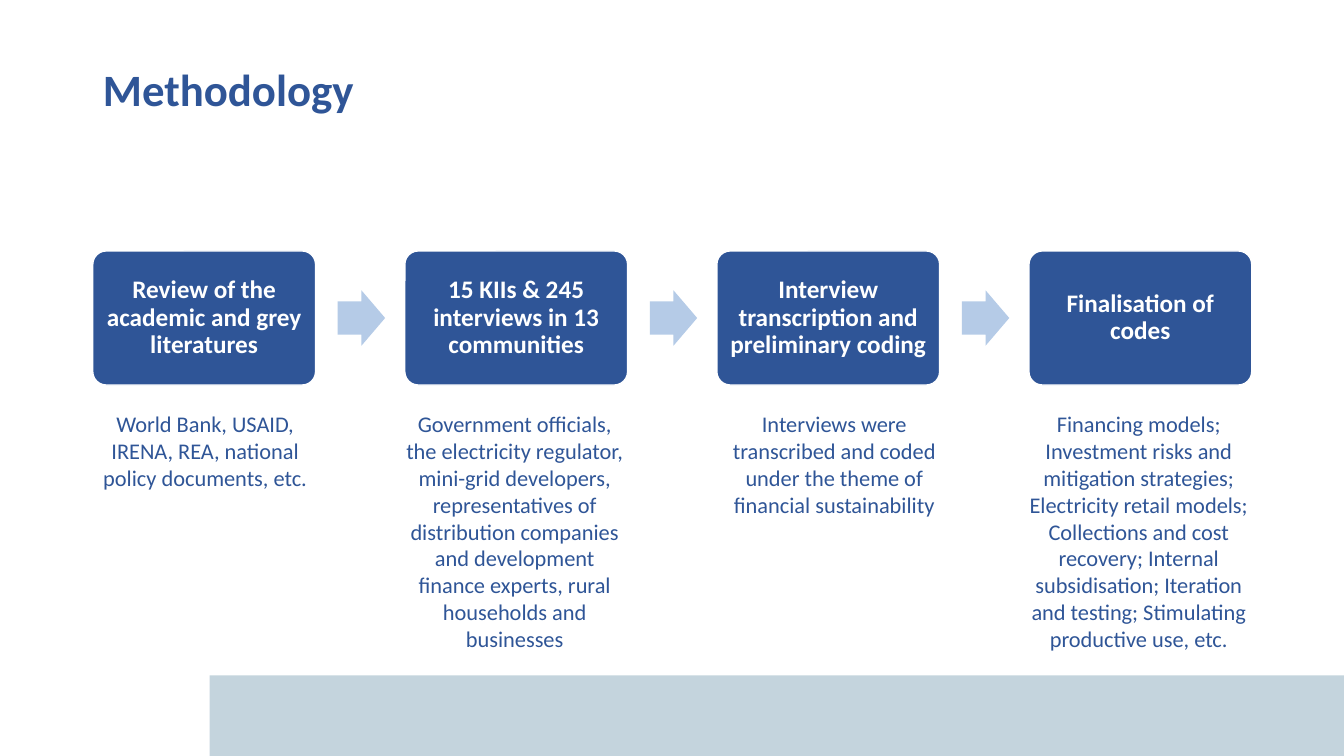
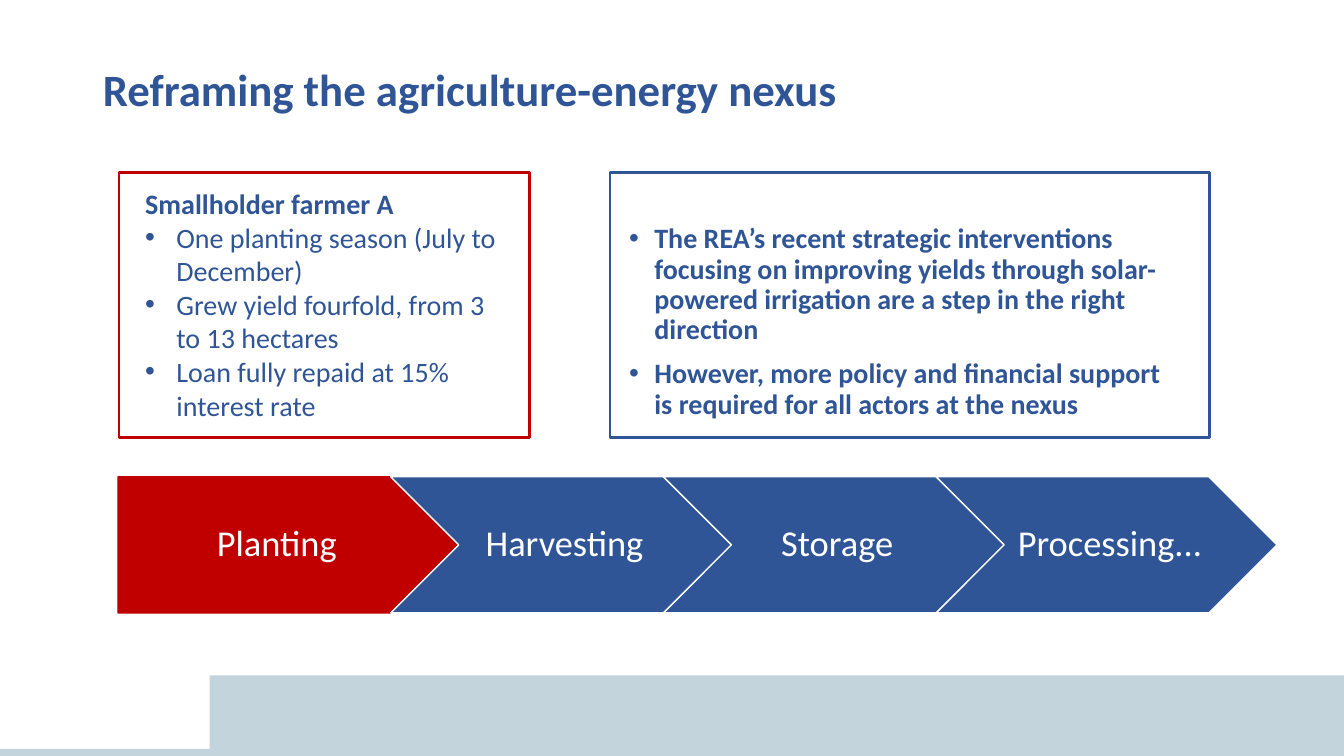
from dataclasses import dataclass

from lxml import etree
from pptx import Presentation
from pptx.dml.color import RGBColor
from pptx.enum import shapes, text
from pptx.oxml import ns
from pptx.util import Inches, Pt

KIND = shapes.MSO_SHAPE
ALIGN = text.PP_ALIGN
MID, TOP = text.MSO_ANCHOR.MIDDLE, text.MSO_ANCHOR.TOP


@dataclass(frozen=True)
class Theme:
    font: str = "Calibri"
    blue: str = "2F5597"
    red: str = "C00000"
    pale: str = "B5CBE7"
    band: str = "C4D4DD"
    white: str = "FFFFFF"
    title: int = 32
    stage: int = 26
    body: int = 20
    step: int = 18
    note: int = 16


@dataclass(frozen=True)
class Box:
    left: float
    top: float
    width: float
    height: float

    def emu(self) -> list:
        return [Inches(v) for v in (self.left, self.top, self.width, self.height)]


@dataclass(frozen=True)
class Para:
    words: str
    size: int
    color: str
    bold: bool = False
    align: ALIGN = ALIGN.LEFT
    line: float = 1.0
    before: int = 0
    hang: float = 0  # hanging indent of a bullet, in inches


@dataclass(frozen=True)
class Step:
    head: str
    note: str
    left: float  # left edge of the note


@dataclass(frozen=True)
class Panel:
    box: Box
    color: str
    pad: tuple
    paras: list


T = Theme()

STEPS = [
    Step("Review of the academic and grey literatures",
         "World Bank, USAID, IRENA, REA, national policy documents, etc.", 0.82),
    Step("15 KIIs & 245 interviews in 13 communities",
         "Government officials, the electricity regulator, mini-grid developers, "
         "representatives of distribution companies and development finance experts, "
         "rural households and businesses", 3.89),
    Step("Interview transcription and preliminary coding",
         "Interviews were transcribed and coded under the theme of "
         "financial sustainability", 7.06),
    Step("Finalisation of codes",
         "Financing models; Investment risks and mitigation strategies; "
         "Electricity retail models; Collections and cost recovery; Internal "
         "subsidisation; Iteration and testing; Stimulating productive use, etc.", 10.08),
]

FACTS = ["One planting season (July to December)",
         "Grew yield fourfold, from 3 to 13 hectares",
         "Loan fully repaid at 15% interest rate"]

VIEWS = ["The REA’s recent strategic interventions focusing on improving yields "
         "through solar-powered irrigation are a step in the right direction",
         "However, more policy and financial support is required for all actors "
         "at the nexus"]

PANELS = [
    Panel(Box(1.18, 1.71, 4.07, 2.63), T.red, (0.26, 0.14, 0.26, 0.05),
          [Para("Smallholder farmer A", T.body, T.blue, True)]
          + [Para(f, T.body, T.blue, hang=0.31) for f in FACTS]),
    Panel(Box(6.05, 1.71, 5.95, 2.63), T.blue, (0.19, 0.52, 0.33, 0.05),
          [Para(v, T.body, T.blue, True, line=0.9, before=10 * (i > 0), hang=0.25)
           for i, v in enumerate(VIEWS)]),
]

STAGES = ["Planting", "Harvesting", "Storage", "Processing..."]


def rgb(color: str) -> RGBColor:
    return RGBColor.from_string(color)


def bullet(para, hang: float) -> None:
    props = para._p.get_or_add_pPr()
    props.set("marL", str(Inches(hang)))
    props.set("indent", str(-Inches(hang)))
    etree.SubElement(props, ns.qn("a:buFont")).set("typeface", "Arial")
    etree.SubElement(props, ns.qn("a:buChar")).set("char", "•")


def write(frame, paras: list, anchor=TOP, pad: tuple = (0.1, 0.05, 0.1, 0.05)) -> None:
    """Fill a text frame; pad is left, top, right, bottom."""
    frame.word_wrap = True
    frame.auto_size = text.MSO_AUTO_SIZE.NONE
    frame.vertical_anchor = anchor
    (frame.margin_left, frame.margin_top,
     frame.margin_right, frame.margin_bottom) = [Inches(v) for v in pad]
    for i, item in enumerate(paras):
        para = frame.add_paragraph() if i else frame.paragraphs[0]
        para.text = item.words
        if item.hang:
            bullet(para, item.hang)
        para.alignment = item.align
        para.line_spacing = item.line
        para.space_before = Pt(item.before)
        font = para.font
        font.name, font.size, font.bold = T.font, Pt(item.size), item.bold
        font.color.rgb = rgb(item.color)


def draw(slide, kind, box: Box, fill: str = "", line: str = "", width: float = 1):
    shape = slide.shapes.add_shape(kind, *box.emu())
    shape.shadow.inherit = False
    if fill:
        shape.fill.solid()
        shape.fill.fore_color.rgb = rgb(fill)
    else:
        shape.fill.background()
    if line:
        shape.line.color.rgb = rgb(line)
        shape.line.width = Pt(width)
    else:
        shape.line.fill.background()
    return shape


def start(deck, title: str):
    """Add a slide with the shared title and footer band."""
    slide = deck.slides.add_slide(deck.slide_layouts[5])
    draw(slide, KIND.RECTANGLE, Box(2.08, 6.7, 11.25, 0.8), T.band)
    head = slide.shapes.title
    head.left, head.top, head.width, head.height = Box(0.92, 0.4, 11.5, 1.02).emu()
    write(head.text_frame, [Para(title, T.title, T.blue, True, line=0.9)], MID)
    return slide


def method(deck) -> None:
    slide = start(deck, "Methodology")
    pitch = 3.095
    for i, step in enumerate(STEPS):
        left = 0.92 + i * pitch
        # Step block
        block = draw(slide, KIND.ROUNDED_RECTANGLE, Box(left, 2.49, 2.21, 1.33),
                     T.blue, T.white)
        block.adjustments[0] = 0.1
        write(block.text_frame,
              [Para(step.head, T.step, T.white, True, ALIGN.CENTER, 0.9)],
              MID, (0.07,) * 4)
        # Arrow to the next step
        if i < len(STEPS) - 1:
            arrow = draw(slide, KIND.RIGHT_ARROW, Box(left + 2.43, 2.88, 0.47, 0.55),
                         T.pale)
            arrow.adjustments[0] = 0.6
        # Note below
        note = slide.shapes.add_textbox(*Box(step.left, 4.02, 2.43, 2.79).emu())
        write(note.text_frame,
              [Para(step.note, T.note, T.blue, align=ALIGN.CENTER)])


def nexus(deck) -> None:
    slide = start(deck, "Reframing the agriculture-energy nexus")
    draw(slide, KIND.RECTANGLE, Box(0, 7.43, 13.21, 0.08), T.band)
    # Value chain
    for i, stage in enumerate(STAGES):
        kind, fill, line, pad = (
            (KIND.CHEVRON, T.blue, T.white, 0.11) if i
            else (KIND.PENTAGON, T.red, T.red, 0.15))
        shape = draw(slide, kind, Box(1.17 + i * 2.705, 4.73, 3.38, 1.35), fill, line)
        write(shape.text_frame,
              [Para(stage, T.stage, T.white, align=ALIGN.CENTER, line=0.9)],
              MID, (pad, 0.08, 0.04, 0.08))
    # Framed panels
    for panel in PANELS:
        frame = draw(slide, KIND.RECTANGLE, panel.box, line=panel.color, width=2)
        write(frame.text_frame, panel.paras, TOP, panel.pad)


def main() -> None:
    deck = Presentation()
    deck.slide_width, deck.slide_height = Inches(13.33), Inches(7.5)
    method(deck)
    nexus(deck)
    deck.save("out.pptx")


if __name__ == "__main__":
    main()
